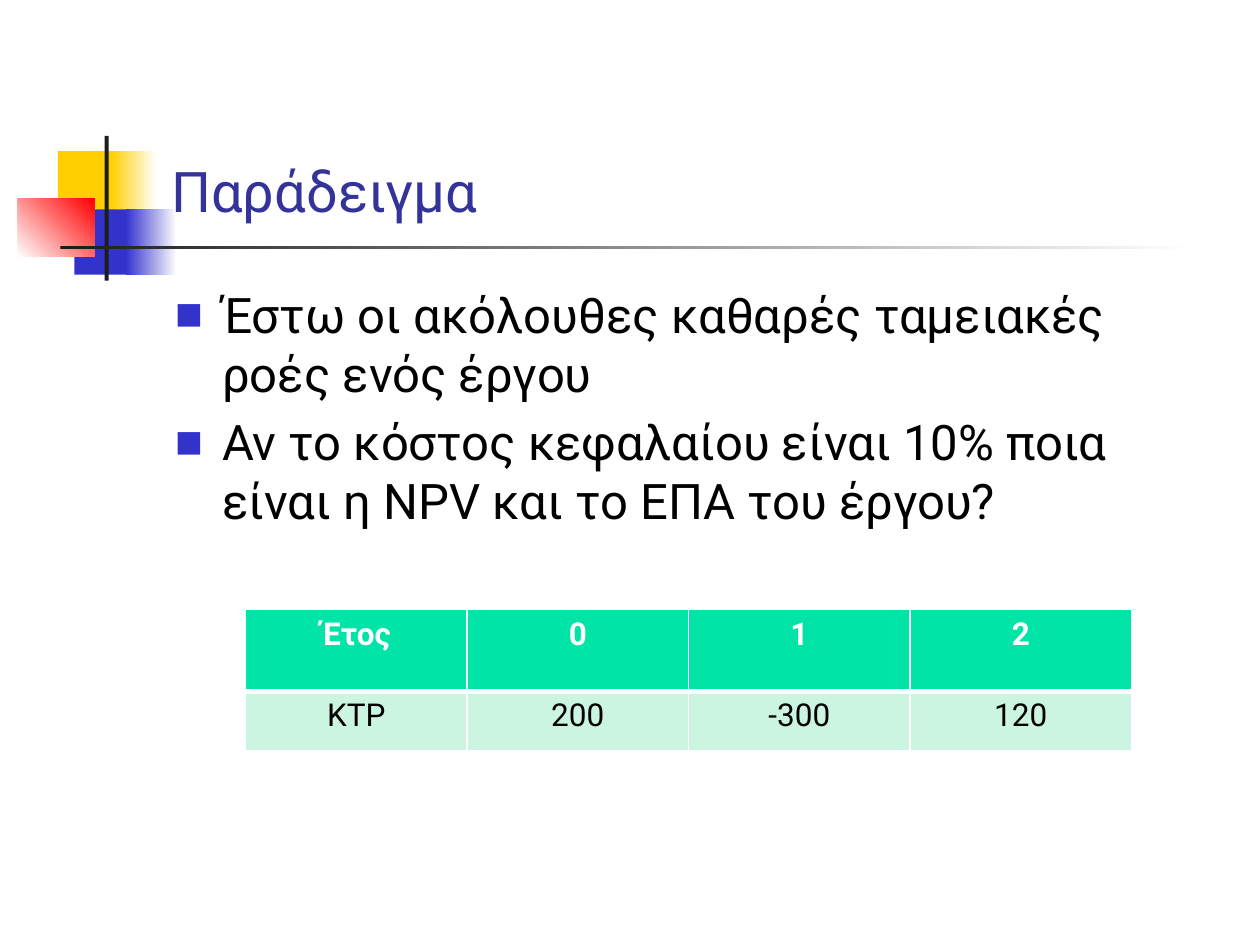
import dataclasses

import lxml.etree
import pptx
import pptx.dml.color
import pptx.enum.dml
import pptx.enum.shapes
import pptx.enum.text
import pptx.oxml.ns
import pptx.util

Cm = pptx.util.Cm
Pt = pptx.util.Pt
ALIGN = pptx.enum.text.PP_ALIGN
qn = pptx.oxml.ns.qn


@dataclasses.dataclass(frozen=True)
class Theme:
    font: str = "Roboto"
    title_size: int = 32
    body_size: int = 28
    table_size: int = 18
    title: str = "333399"
    text: str = "000000"
    white: str = "FFFFFF"
    yellow: str = "FFCF01"
    blue: str = "3333CC"
    red: str = "FF0000"
    dark: str = "1C1C1C"
    header: str = "00E4A8"
    row: str = "CCF5E1"


def rgb(code):
    return pptx.dml.color.RGBColor.from_string(code)


def write(para, text, *, font, size, color, bold=False, align=ALIGN.LEFT):
    """Put one formatted span of text into a paragraph."""
    para.alignment = align
    span = para.add_run()
    span.text = text
    span.font.name = font
    span.font.size = Pt(size)
    span.font.bold = bold
    span.font.color.rgb = rgb(color)


def add_child(parent, tag, **attributes):
    child = lxml.etree.SubElement(parent, qn(tag))
    for name, value in attributes.items():
        child.set(name, str(value))
    return child


class SlideBuilder:
    def __init__(self, slide, theme):
        self.slide = slide
        self.theme = theme

    def block(self, left, top, width, height, start, end=None, angle=0):
        """Add a rectangle, plain or fading from start to end."""
        box = self.slide.shapes.add_shape(
            pptx.enum.shapes.MSO_SHAPE.RECTANGLE,
            Cm(left), Cm(top), Cm(width), Cm(height))
        box.shadow.inherit = False
        box.line.fill.background()
        if end is None:
            box.fill.solid()
            box.fill.fore_color.rgb = rgb(start)
            return
        box.fill.gradient()
        box.fill.gradient_angle = angle
        for stop, color, position in zip(box.fill.gradient_stops, (start, end), (0, 1)):
            stop.color.rgb = rgb(color)
            stop.position = position

    def title(self, text, left, top, width, height):
        box = self.slide.shapes.title
        box.left, box.top, box.width, box.height = Cm(left), Cm(top), Cm(width), Cm(height)
        frame = box.text_frame
        frame.auto_size = pptx.enum.text.MSO_AUTO_SIZE.NONE
        frame.vertical_anchor = pptx.enum.text.MSO_ANCHOR.BOTTOM
        write(frame.paragraphs[0], text, font=self.theme.font,
              size=self.theme.title_size, color=self.theme.title)
        # Bring the title in front of the decoration
        self.slide.shapes._spTree.append(box._element)

    def bullets(self, texts, left, top, width, height):
        frame = self.slide.shapes.add_textbox(
            Cm(left), Cm(top), Cm(width), Cm(height)).text_frame
        frame.word_wrap = True
        indent = Cm(0.95)
        for index, text in enumerate(texts):
            para = frame.add_paragraph() if index else frame.paragraphs[0]
            if index:
                para.space_before = Pt(0.2 * self.theme.body_size)
            properties = para._p.get_or_add_pPr()
            properties.set("marL", str(indent))
            properties.set("indent", str(-indent))
            color = add_child(properties, "a:buClr")
            add_child(color, "a:srgbClr", val=self.theme.blue)
            add_child(properties, "a:buSzPct", val=60000)
            add_child(properties, "a:buFont", typeface=self.theme.font)
            add_child(properties, "a:buChar", char="■")
            write(para, text, font=self.theme.font,
                  size=self.theme.body_size, color=self.theme.text)

    def borders(self, cell, **widths):
        properties = cell._tc.get_or_add_tcPr()
        for side in ("L", "R", "T", "B"):
            line = add_child(properties, f"a:ln{side}", w=Pt(widths.get(side, 1)))
            fill = add_child(line, "a:solidFill")
            add_child(fill, "a:srgbClr", val=self.theme.white)

    def table(self, rows, left, top, width, heights):
        theme = self.theme
        table = self.slide.shapes.add_table(
            len(rows), len(rows[0]), Cm(left), Cm(top),
            Cm(width), Cm(sum(heights))).table
        for row_index, values in enumerate(rows):
            is_header = row_index == 0
            table.rows[row_index].height = Cm(heights[row_index])
            for column_index, value in enumerate(values):
                cell = table.cell(row_index, column_index)
                # A thick rule parts the header from the values
                self.borders(cell, **({"B": 3} if is_header else {"T": 3}))
                cell.fill.solid()
                cell.fill.fore_color.rgb = rgb(theme.header if is_header else theme.row)
                write(cell.text_frame.paragraphs[0], value, font=theme.font,
                      size=theme.table_size, bold=is_header, align=ALIGN.CENTER,
                      color=theme.white if is_header else theme.text)


def main():
    deck = pptx.Presentation()
    deck.slide_width, deck.slide_height = Cm(25.4), Cm(19.05)
    theme = Theme()
    page = SlideBuilder(deck.slides.add_slide(deck.slide_layouts[5]), theme)

    # Coloured squares and crossing bars
    page.block(1.17, 3.05, 1.22, 1.32, theme.yellow)
    page.block(2.24, 3.05, 0.91, 1.32, theme.yellow, theme.white)
    page.block(1.5, 4.22, 1.17, 1.32, theme.blue)
    page.block(2.54, 4.22, 1.02, 1.32, theme.blue, theme.white)
    page.block(0.36, 4.01, 1.55, 1.17, theme.white, theme.red, angle=45)
    page.block(2.11, 2.74, 0.08, 2.92, theme.dark)
    page.block(1.22, 4.95, 22.86, 0.08, theme.dark, theme.white)

    # Title and question
    page.title("Παράδειγμα", 3.2, 0.58, 21.64, 4.06)
    page.bullets([
        "Έστω οι ακόλουθες καθαρές ταμειακές ροές ενός έργου",
        "Αν το κόστος κεφαλαίου είναι 10% ποια είναι η NPV και το ΕΠΑ του έργου?",
    ], 3.28, 5.61, 21.59, 11.43)

    # Net cash flow by year
    page.table([
        ["Έτος", "0", "1", "2"],
        ["ΚΤΡ", "200", "-300", "120"],
    ], 4.95, 12.29, 17.86, (1.65, 1.19))

    deck.save("out.pptx")


if __name__ == "__main__":
    main()
